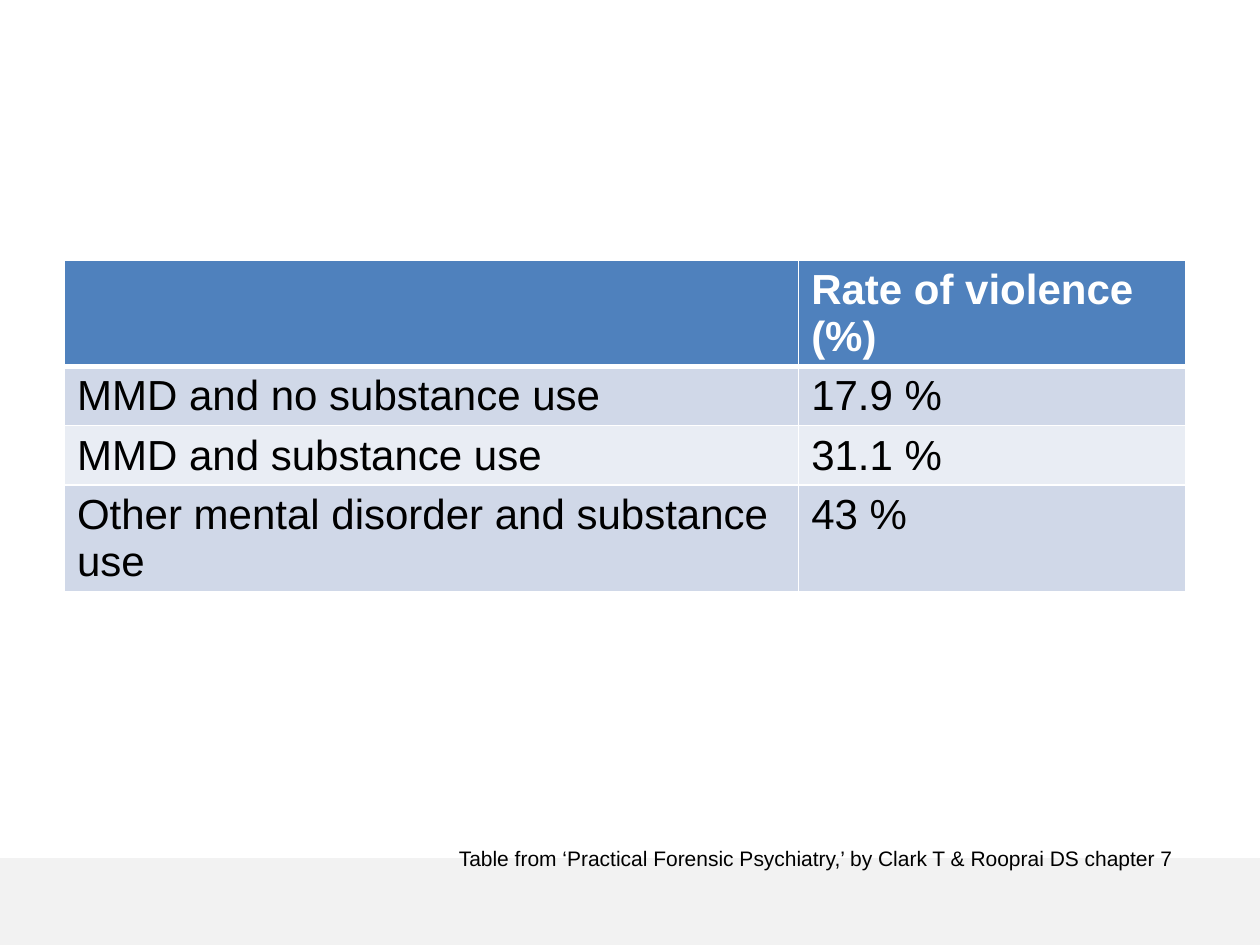
from lxml import etree
from pptx import Presentation
from pptx.dml.color import RGBColor
from pptx.enum.shapes import MSO_SHAPE
from pptx.oxml.ns import qn
from pptx.util import Cm, Pt

RECT = MSO_SHAPE.RECTANGLE
FONT = "Arial"
COLORS = {
    "band": "F2F2F2",
    "header": "4F81BD",
    "odd": "D0D8E8",
    "even": "E9EDF4",
    "white": "FFFFFF",
    "text": "000000",
}
ROWS = [
    ("", "Rate of violence (%)"),
    ("MMD and no substance use", "17.9 %"),
    ("MMD and substance use", "31.1 %"),
    ("Other mental disorder and substance use", "43 %"),
]
SOURCE = "Table from ‘Practical Forensic Psychiatry,’ by Clark T & Rooprai DS chapter 7"


def rgb(name):
    return RGBColor.from_string(COLORS[name])


def add_run(p, text, size, color, bold=False):
    r = p.add_run()
    r.text = text
    r.font.name = FONT
    r.font.size = Pt(size)
    r.font.bold = bold
    r.font.color.rgb = rgb(color)


def set_borders(cell, bottom):
    tc_pr = cell._tc.get_or_add_tcPr()
    for side, width in (("L", 1), ("R", 1), ("T", 1), ("B", bottom)):
        ln = etree.SubElement(tc_pr, qn(f"a:ln{side}"), w=str(Pt(width)))
        fill = etree.SubElement(ln, qn("a:solidFill"))
        etree.SubElement(fill, qn("a:srgbClr"), val=COLORS["white"])


def add_footer_band(s, x, y, w, h):
    sp = s.shapes.add_shape(RECT, x, y, w, h)
    sp.shadow.inherit = False
    sp.fill.solid()
    sp.fill.fore_color.rgb = rgb("band")
    sp.line.fill.background()


def add_rate_table(s, x, y, w, h):
    table = s.shapes.add_table(len(ROWS), 2, x, y, w, h).table
    label_w = Cm(14.8)
    table.columns[0].width = label_w
    table.columns[1].width = w - label_w
    for i, values in enumerate(ROWS):
        header = i == 0
        table.rows[i].height = Cm(2.06 if header else 1.04)
        fill = "header" if header else "odd" if i % 2 else "even"
        for cell, text in zip(table.rows[i].cells, values):
            set_borders(cell, 3 if header else 1)
            cell.fill.solid()
            cell.fill.fore_color.rgb = rgb(fill)
            if text:
                p = cell.text_frame.paragraphs[0]
                add_run(p, text, 24, "white" if header else "text", header)


def add_source(s, x, y, w, h):
    tf = s.shapes.add_textbox(x, y, w, h).text_frame
    tf.word_wrap = True
    add_run(tf.paragraphs[0], SOURCE, 12, "text")


def main():
    prs = Presentation()
    prs.slide_width, prs.slide_height = Cm(25.4), Cm(19.05)
    s = prs.slides.add_slide(prs.slide_layouts[6])
    add_footer_band(s, 0, Cm(17.3), prs.slide_width, Cm(1.75))
    add_rate_table(s, Cm(1.3), Cm(5.24), Cm(22.6), Cm(5.18))
    add_source(s, Cm(9), Cm(16.92), Cm(16.4), Cm(0.77))
    prs.save("out.pptx")


if __name__ == "__main__":
    main()
